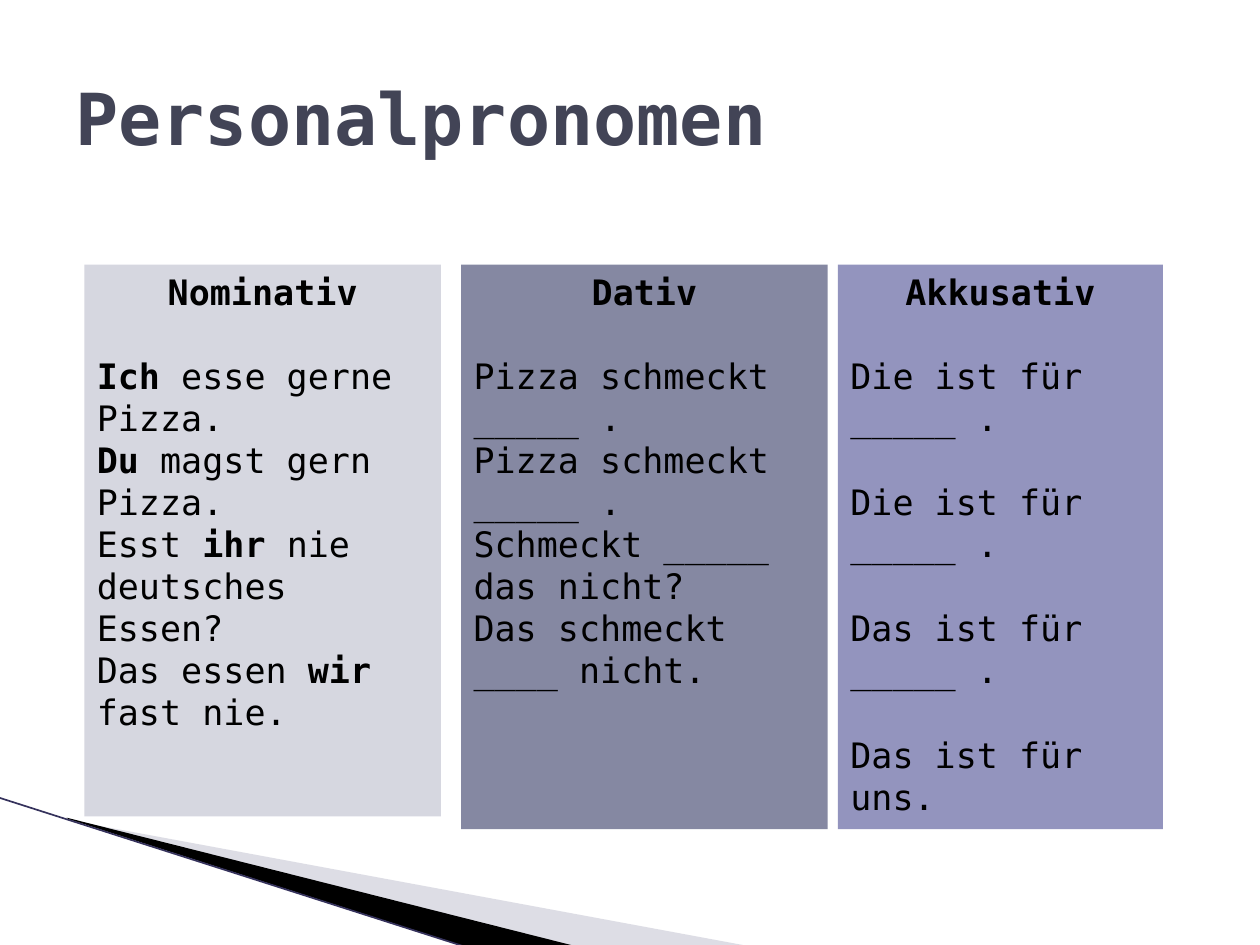
from lxml.etree import SubElement
from pptx import Presentation
from pptx.dml.color import RGBColor as Rgb
from pptx.enum.shapes import MSO_CONNECTOR as Link, MSO_SHAPE as Shape
from pptx.enum.text import MSO_ANCHOR as Anchor, PP_ALIGN as Align
from pptx.oxml.ns import qn
from pptx.util import Inches, Pt

HUES = {"title": "424456", "text": "000000", "nom": "D6D7E0", "dat": "8588A2",
        "akk": "9394BE", "wing": "AAAABF", "edge": "35325C"}
CASES = [
    ("nom", 6.7, 28.3, 43.8, 0, "Nominativ",
     ["*Ich* esse gerne Pizza.", "*Du* magst gern Pizza.",
      "Esst *ihr* nie deutsches Essen?", "Das essen *wir* fast nie."]),
    ("dat", 36.6, 29.1, 44.8, 0, "Dativ",
     ["Pizza schmeckt _____ ."] * 2
     + ["Schmeckt _____ das nicht?", "Das schmeckt ____ nicht."]),
    ("akk", 66.5, 25.8, 44.8, 24, "Akkusativ",
     ["Die ist für _____ ."] * 2 + ["Das ist für _____ .", "Das ist für uns."]),
]


class Deck:
    """Draws one slide on a grid of 100 columns by 75 rows."""

    font, size, gap = "DejaVu Sans Mono", 20, 24

    def __init__(self):
        self.prs = Presentation()
        self.prs.slide_width, self.prs.slide_height = Inches(10), Inches(7.5)
        self.unit = self.prs.slide_width / 100
        self.shapes = self.prs.slides.add_slide(self.prs.slide_layouts[6]).shapes

    def grid(self, *cells):
        return [round(cell * self.unit) for cell in cells]

    def paint(self, shape, hue):
        shape.shadow.inherit = False
        shape.fill.solid()
        shape.fill.fore_color.rgb = Rgb.from_string(HUES[hue])
        shape.line.fill.background()

    def style(self, run, size, hue, bold):
        font = run.font
        font.name, font.size, font.bold = self.font, Pt(size), bold
        font.color.rgb = Rgb.from_string(HUES[hue])

    def title(self, text, *box):
        frame = self.shapes.add_textbox(*self.grid(*box)).text_frame
        frame.word_wrap = True
        frame.vertical_anchor = Anchor.MIDDLE
        frame.text = text
        self.style(frame.paragraphs[0].runs[0], 41, "title", True)

    def card(self, hue, left, width, height, space, head, lines):
        shape = self.shapes.add_shape(Shape.RECTANGLE, *self.grid(left, 21, width, height))
        self.paint(shape, hue)
        frame = shape.text_frame
        frame.word_wrap = True
        frame.vertical_anchor = Anchor.TOP
        frame.text = head
        top = frame.paragraphs[0]
        top.alignment = Align.CENTER
        self.style(top.runs[0], self.size, "text", True)
        for row, line in enumerate(lines):
            para = frame.add_paragraph()
            para.alignment = Align.LEFT
            para.space_before = Pt(space if row else self.gap)
            for part, words in enumerate(line.split("*")):
                if words:
                    run = para.add_run()
                    run.text = words
                    self.style(run, self.size, "text", part % 2 == 1)

    def wing(self, hue, points, alpha=100):
        start, *rest = [self.grid(*point) for point in points]
        pen = self.shapes.build_freeform(*start)
        pen.add_line_segments(rest)
        shape = pen.convert_to_shape()
        self.paint(shape, hue)
        tint = shape._element.spPr.find(qn("a:solidFill"))[0]
        SubElement(tint, qn("a:alpha"), val=str(alpha * 1000))

    def edge(self, hue, *ends):
        line = self.shapes.add_connector(Link.STRAIGHT, *self.grid(*ends))
        line.line.color.rgb = Rgb.from_string(HUES[hue])
        line.line.width = Pt(0.95)
        SubElement(line._element.spPr, qn("a:effectLst"))


def main():
    deck = Deck()
    deck.wing("wing", [(5.5, 65.1), (59.5, 75.1), (45.6, 75.1), (5.5, 65)], 40)
    deck.wing("text", [(5.3, 64.9), (45.7, 75.1), (37.2, 75.2), (5.4, 65)])
    deck.edge("edge", -0.1, 63.3, 37.1, 75.2)
    deck.title("Personalpronomen", 5, 3, 90, 12.5)
    for case in CASES:
        deck.card(*case)
    deck.prs.save("out.pptx")


if __name__ == "__main__":
    main()
